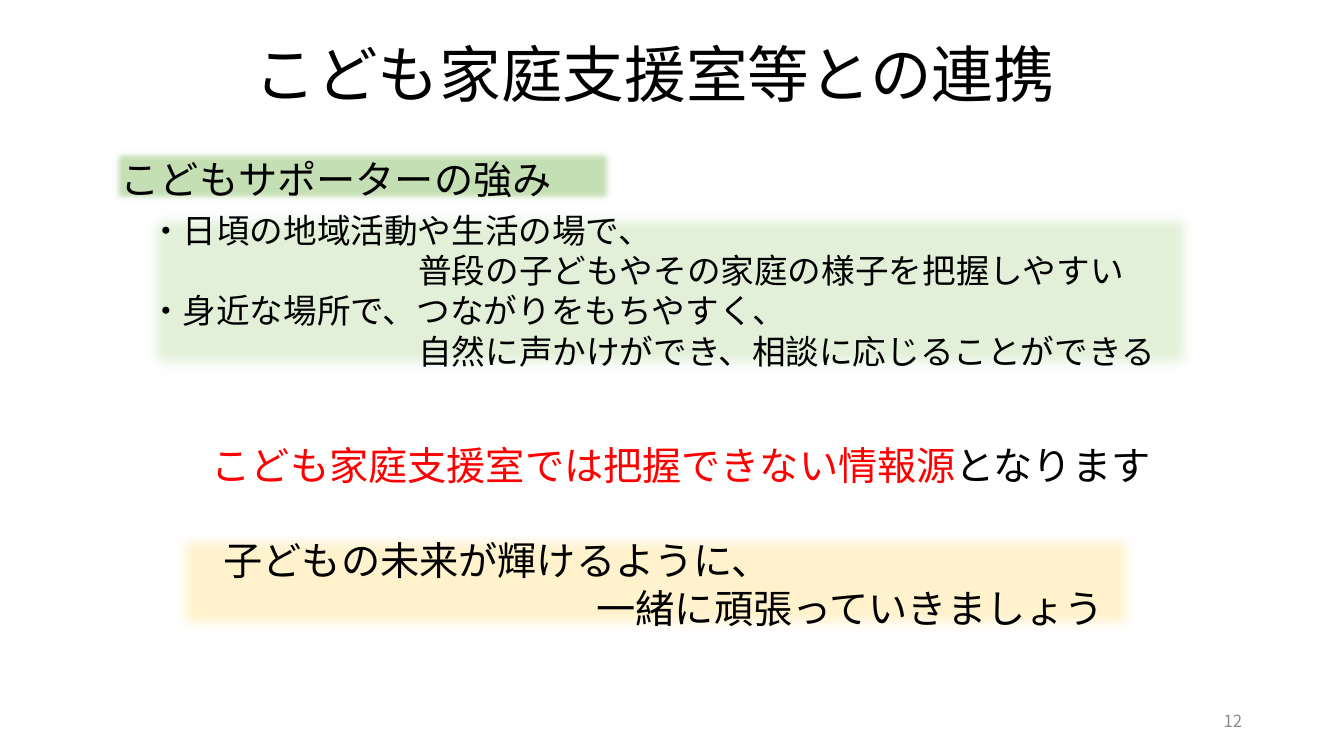
from dataclasses import dataclass
from typing import Optional

from lxml import etree
from pptx import Presentation
from pptx import util as u
from pptx.dml import color
from pptx.enum import shapes, text
from pptx.oxml import ns

FONT = "Noto Sans CJK JP"
BLACK, RED, GREY = "000000", "FF0000", "8C8C8C"
LEFT, CENTER, RIGHT = text.PP_ALIGN.LEFT, text.PP_ALIGN.CENTER, text.PP_ALIGN.RIGHT
TOP, MIDDLE = text.MSO_ANCHOR.TOP, text.MSO_ANCHOR.MIDDLE


@dataclass
class Phrase:
    words: str
    hue: str = BLACK


@dataclass
class Line:
    phrases: list[Phrase]
    indent: float = 0


@dataclass
class Block:
    left: float
    top: float
    width: float
    height: float
    size: int
    lines: list[Line]
    leading: Optional[float] = None
    align: text.PP_ALIGN = LEFT
    anchor: text.MSO_ANCHOR = TOP
    inset: float = 0.05
    fill: Optional[str] = None
    soft_edge: float = 0


def rgb(value: str) -> color.RGBColor:
    return color.RGBColor.from_string(value)


def apply(target, values: dict) -> None:
    for attribute, value in values.items():
        setattr(target, attribute, value)


def add_panel(slide, block: Block, bounds: list):
    panel = slide.shapes.add_shape(shapes.MSO_SHAPE.RECTANGLE, *bounds)
    panel.shadow.inherit = False
    panel.fill.solid()
    panel.fill.fore_color.rgb = rgb(block.fill)
    panel.line.fill.background()
    effects = panel._element.spPr.find(ns.qn("a:effectLst"))
    etree.SubElement(effects, ns.qn("a:softEdge"), rad=str(u.Pt(block.soft_edge)))
    return panel


def add_phrase(paragraph, phrase: Phrase, size: int) -> None:
    run = paragraph.add_run()
    run.text = phrase.words
    apply(run.font, {"name": FONT, "size": u.Pt(size)})
    run.font.color.rgb = rgb(phrase.hue)
    etree.SubElement(run._r.get_or_add_rPr(), ns.qn("a:ea"), typeface=FONT)


def add_block(slide, block: Block) -> None:
    bounds = [u.Inches(n) for n in (block.left, block.top, block.width, block.height)]
    holder = add_panel(slide, block, bounds) if block.fill else slide.shapes.add_textbox(*bounds)
    frame = holder.text_frame
    apply(frame, {
        "word_wrap": True,
        "vertical_anchor": block.anchor,
        "margin_left": u.Inches(0.1),
        "margin_right": u.Inches(0.1),
        "margin_top": u.Inches(block.inset),
        "margin_bottom": u.Inches(0.05),
    })
    for index, line in enumerate(block.lines):
        paragraph = frame.add_paragraph() if index else frame.paragraphs[0]
        paragraph.alignment = block.align
        if block.leading:
            paragraph.line_spacing = u.Pt(block.leading)
        if line.indent:
            paragraph._p.get_or_add_pPr().set("marL", str(u.Inches(line.indent)))
        for phrase in line.phrases:
            add_phrase(paragraph, phrase, block.size)


BLOCKS = [
    Block(1.1, 0.35, 10.8, 0.91, 44, [Line([Phrase("こども家庭支援室等との連携")])],
          leading=47, align=CENTER, inset=0.09),
    Block(1.38, 2.03, 10.52, 1.72, 24, [
        Line([Phrase("・日頃の地域活動や生活の場で、")]),
        Line([Phrase("普段の子どもやその家庭の様子を把握しやすい")], 2.67),
        Line([Phrase("・身近な場所で、つながりをもちやすく、")]),
        Line([Phrase("自然に声かけができ、相談に応じることができる")], 2.67),
    ], leading=28.8, fill="E2F0D9", soft_edge=10),
    Block(1.1, 1.46, 4.99, 0.57, 28, [Line([Phrase("こどもサポーターの強み")])],
          leading=36, fill="C5E0B4", soft_edge=5),
    Block(0.42, 4.3, 12.67, 0.57, 28, [
        Line([Phrase("こども家庭支援室では把握できない情報源", RED), Phrase("となります")]),
    ], leading=36, align=CENTER),
    Block(1.68, 5.22, 9.64, 1.11, 28, [
        Line([Phrase("子どもの未来が輝けるように、")], 0.44),
        Line([Phrase("一緒に頑張っていきましょう")], 4.14),
    ], leading=34, inset=0.1, fill="FFF2CC", soft_edge=10),
    Block(9.42, 6.95, 3, 0.4, 12, [Line([Phrase("12", GREY)])], align=RIGHT, anchor=MIDDLE),
]


def main() -> None:
    deck = Presentation()
    apply(deck, {"slide_width": u.Inches(13.33), "slide_height": u.Inches(7.5)})
    slide = deck.slides.add_slide(deck.slide_layouts[6])
    for block in BLOCKS:
        add_block(slide, block)
    deck.save("out.pptx")


if __name__ == "__main__":
    main()
